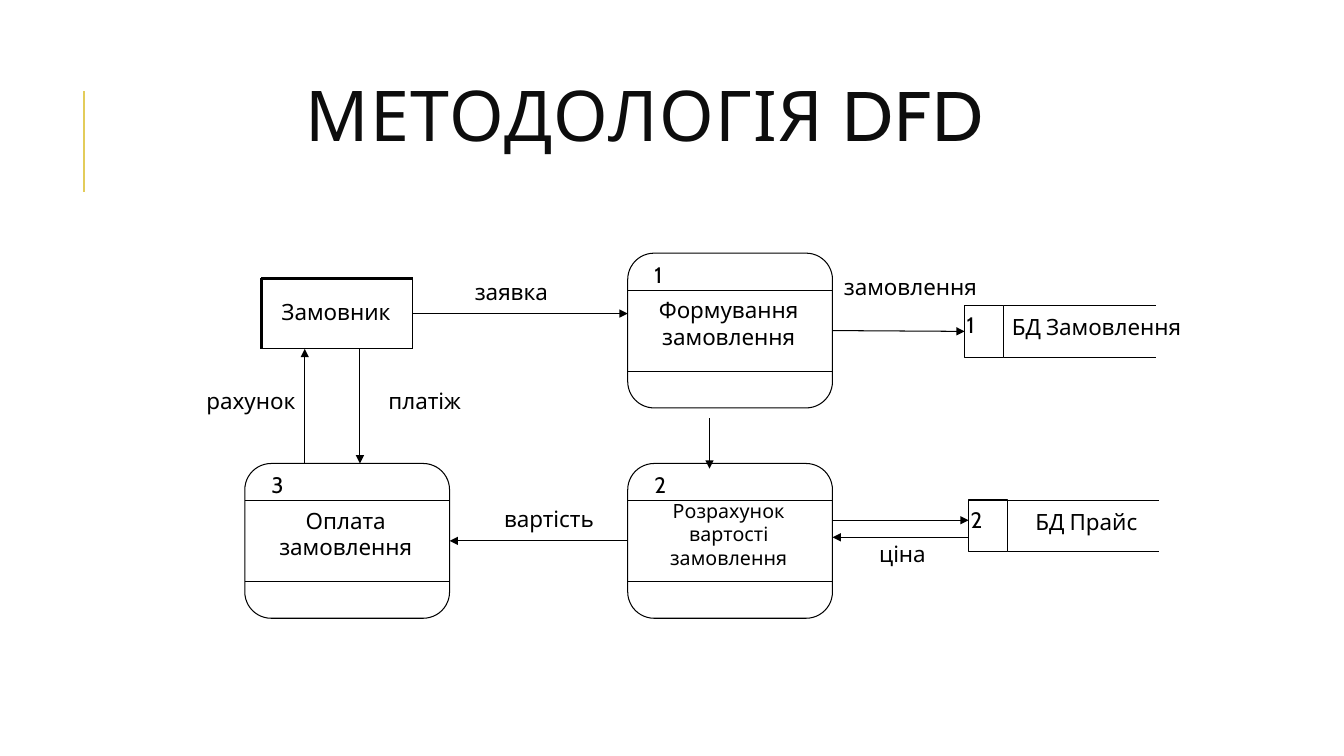
import pptx
import pptx.util
import pptx.dml.color
import pptx.enum.shapes
import pptx.enum.text
import pptx.oxml.ns
import lxml.etree

Cm, Pt = pptx.util.Cm, pptx.util.Pt
rgb = pptx.dml.color.RGBColor.from_string
qn = pptx.oxml.ns.qn
MSO = pptx.enum.shapes.MSO_SHAPE
ALIGN = pptx.enum.text.PP_ALIGN
ANCHOR = pptx.enum.text.MSO_ANCHOR

prs = pptx.Presentation()
prs.slide_width, prs.slide_height = Cm(33.87), Cm(19.05)
s = prs.slides.add_slide(prs.slide_layouts[5])


def add_box(x, y, w, h, text="", size=16, align=ALIGN.CENTER, kind=MSO.RECTANGLE, outline=False, inset=(0, 0)):
    sp = s.shapes.add_shape(kind, Cm(x), Cm(y), Cm(w), Cm(h))
    sp.shadow.inherit = False
    sp.fill.solid()
    sp.fill.fore_color.rgb = rgb("FFFFFF")
    if outline:
        sp.line.color.rgb = rgb("000000")
        sp.line.width = Pt(0.75)
    else:
        sp.line.fill.background()
    if text:
        tf = sp.text_frame
        dx, dy = Cm(inset[0]), Cm(inset[1])
        frame = {"word_wrap": True, "vertical_anchor": ANCHOR.TOP, "margin_left": dx,
                 "margin_right": dx, "margin_top": dy, "margin_bottom": dy}
        for name, value in frame.items():
            setattr(tf, name, value)
        p = tf.paragraphs[0]
        p.alignment = align
        r = p.add_run()
        r.text = text
        for name, value in {"name": "Cabin", "size": Pt(size)}.items():
            setattr(r.font, name, value)
        r.font.color.rgb = rgb("000000")
    return sp


def add_line(x1, y1, x2, y2, width=0.75, color="000000", arrow=False):
    c = s.shapes.add_connector(pptx.enum.shapes.MSO_CONNECTOR.STRAIGHT, Cm(x1), Cm(y1), Cm(x2), Cm(y2))
    c.line.color.rgb = rgb(color)
    c.line.width = Pt(width)
    if arrow:
        lxml.etree.SubElement(c.line._get_or_add_ln(), qn("a:tailEnd"), type="triangle", w="med", len="med")
    lxml.etree.SubElement(c._element.spPr, qn("a:effectLst"))
    return c


add_line(2.11, 4.83, 2.11, 2.29, 1.5, "E3CC5A")

title = s.shapes.title
place = {"left": Cm(7.44), "top": Cm(1.45), "width": Cm(21.64), "height": Cm(3.2)}
for name, value in place.items():
    setattr(title, name, value)
tf = title.text_frame
frame = {"word_wrap": True, "auto_size": pptx.enum.text.MSO_AUTO_SIZE.NONE, "vertical_anchor": ANCHOR.MIDDLE}
for name, value in frame.items():
    setattr(tf, name, value)
p = tf.paragraphs[0]
p.alignment = ALIGN.LEFT
p.line_spacing = 0.8
r = p.add_run()
r.text = "МЕТОДОЛОГІЯ DFD"
for name, value in {"name": "Cabin", "size": Pt(50)}.items():
    setattr(r.font, name, value)
r.font.color.rgb = rgb("0D0D0D")
r._r.get_or_add_rPr().set("spc", "100")

left, top, right, bottom = 6.58, 7.01, 10.4, 8.79
add_line(left, top, right, top, 2.25)
add_line(left, top, left, bottom, 2.25)
add_line(left, bottom, right, bottom, 1)
add_line(right, top, right, bottom, 1)

labels = [
    ("Замовник", 6.91, 7.52, 3.12, 0.74),
    ("заявка", 11.58, 7.01, 2.62, 0.69),
    ("рахунок", 4.75, 9.75, 3.15, 0.51),
    ("замовлення", 21.08, 6.88, 3.73, 1.09),
    ("платіж", 9.42, 9.75, 2.57, 0.74),
    ("вартість", 11.89, 12.73, 3.89, 0.74),
    ("ціна", 21.46, 13.61, 2.57, 0.74),
]
for text, x, y, w, h in labels:
    add_box(x, y, w, h, text)

processes = {}
for number, text, x, y, caption_dy, size in [
    ("1", "Формування замовлення", 15.82, 6.38, 1.09, 16),
    ("3", "Оплата замовлення", 6.17, 11.68, 1.09, 16),
    ("2", "Розрахунок вартості замовлення", 15.82, 11.68, 0.89, 14),
]:
    sp = add_box(x, y, 5.16, 3.9, kind=MSO.ROUNDED_RECTANGLE, outline=True)
    sp.adjustments[0] = 0.17
    processes[number] = sp
    add_box(x + 0.13, y + caption_dy, 4.83, 1.8, text, size)
    add_box(x + 0.67, y + 0.2, 3.53, 0.74, number, align=ALIGN.LEFT)
    for dy in (0.94, 2.97):
        add_line(x, y + dy, x + 5.16, y + dy)

stores = {}
for number, text, x, y, caption_x, caption_w in [
    ("1", "БД Замовлення", 24.31, 7.7, 25.07, 5.13),
    ("2", "БД Прайс", 24.41, 12.6, 25.83, 3.1),
]:
    for dy in (0, 1.3):
        add_line(x + 0.99, y + dy, x + 4.81, y + dy)
    add_box(caption_x, y + 0.2, caption_w, 0.74, text)
    stores[number] = add_box(x, y, 0.99, 1.3, number, align=ALIGN.LEFT, outline=True, inset=(0.05, 0.15))

for x1, y1, x2, y2 in [
    (10.4, 7.9, 15.82, 7.9),
    (7.68, 11.68, 7.68, 8.79),
    (9.07, 8.79, 9.07, 11.68),
    (20.98, 13.11, 24.41, 13.11),
    (24.41, 13.54, 20.98, 13.54),
    (17.88, 10.54, 17.88, 11.81),
]:
    add_line(x1, y1, x2, y2, arrow=True)

for source, source_side, target, target_side in [
    (processes["1"], 3, stores["1"], 1),
    (processes["2"], 1, processes["3"], 3),
]:
    c = add_line(0, 0, 1, 1, arrow=True)
    c.begin_connect(source, source_side)
    c.end_connect(target, target_side)

prs.save("out.pptx")
